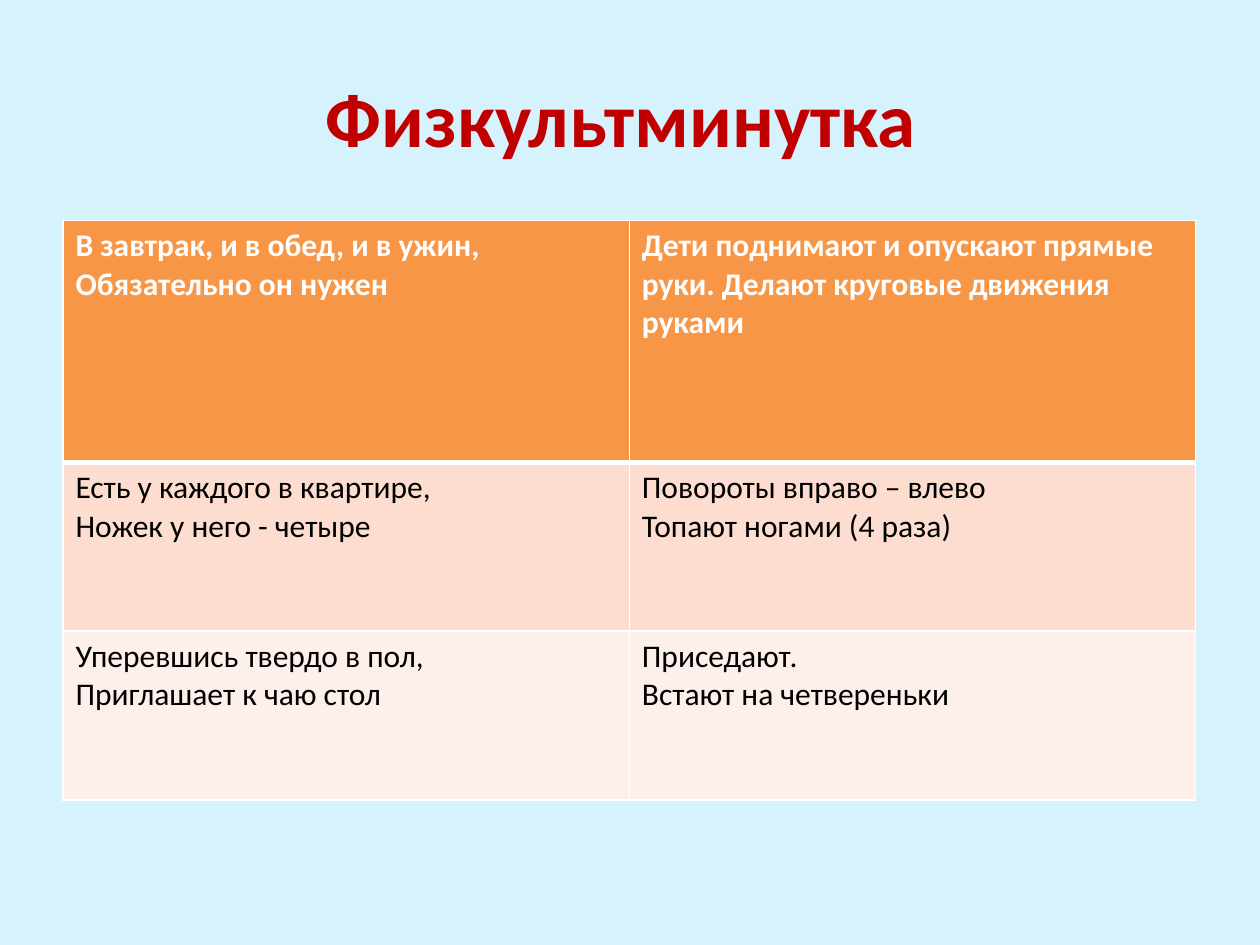
from dataclasses import dataclass

from lxml import etree
from pptx import Presentation
from pptx import util as u
from pptx.dml.color import RGBColor
from pptx.enum import text
from pptx.oxml.ns import qn


@dataclass(frozen=True)
class Theme:
    font: str = "Calibri"
    title_size: int = 44
    body_size: int = 18
    background: str = "D6F2FD"
    title: str = "C00000"
    border: str = "FFFFFF"
    thin: int = 1
    thick: int = 3


@dataclass(frozen=True)
class Row:
    height: float
    fill: str
    color: str
    bold: bool
    verse: str
    movement: str


THEME = Theme()
MARGIN = 0.5
COLUMN_WIDTH = 4.495
ROWS = [
    Row(1.92, "F79646", "FFFFFF", True,
        "В завтрак, и в обед, и в ужин,\nОбязательно он нужен",
        "Дети поднимают и опускают прямые руки. Делают круговые движения руками"),
    Row(1.34, "FCDDCF", "000000", False,
        "Есть у каждого в квартире,\nНожек у него - четыре",
        "Повороты вправо – влево\nТопают ногами (4 раза)"),
    Row(1.34, "FDEFE9", "000000", False,
        "Уперевшись твердо в пол,\nПриглашает к чаю стол",
        "Приседают.\nВстают на четвереньки"),
]


def format_text(frame, size: int, color: str, bold: bool) -> None:
    for para in frame.paragraphs:
        for span in para.runs:
            span.font.name = THEME.font
            span.font.size = u.Pt(size)
            span.font.bold = bold
            span.font.color.rgb = RGBColor.from_string(color)


def set_borders(cell, top: int, bottom: int) -> None:
    """Border lines stand before the fill in the cell properties."""
    properties = cell._tc.get_or_add_tcPr()
    widths = {"lnL": THEME.thin, "lnR": THEME.thin, "lnT": top, "lnB": bottom}
    for position, (side, width) in enumerate(widths.items()):
        line = etree.Element(qn(f"a:{side}"), w=str(u.Pt(width)))
        fill = etree.SubElement(line, qn("a:solidFill"))
        etree.SubElement(fill, qn("a:srgbClr"), val=THEME.border)
        properties.insert(position, line)


def add_title(slide, wording: str) -> None:
    title = slide.shapes.title
    title.left, title.top = u.Inches(MARGIN), u.Inches(0.3)
    title.width, title.height = u.Inches(9), u.Inches(1.25)
    frame = title.text_frame
    frame.text = wording
    frame.vertical_anchor = text.MSO_ANCHOR.MIDDLE
    frame.paragraphs[0].alignment = text.PP_ALIGN.CENTER
    format_text(frame, THEME.title_size, THEME.title, True)


def add_exercise_table(slide, rows: list[Row]) -> None:
    table = slide.shapes.add_table(
        len(rows), 2, u.Inches(MARGIN), u.Inches(1.75),
        u.Inches(2 * COLUMN_WIDTH), u.Inches(sum(row.height for row in rows))).table
    for column in table.columns:
        column.width = u.Inches(COLUMN_WIDTH)
    for index, row in enumerate(rows):
        table.rows[index].height = u.Inches(row.height)
        # A thick rule parts the heading row from the rest
        top = THEME.thick if index == 1 else THEME.thin
        bottom = THEME.thick if index == 0 else THEME.thin
        for cell, wording in zip(table.rows[index].cells, (row.verse, row.movement)):
            cell.text_frame.text = wording
            format_text(cell.text_frame, THEME.body_size, row.color, row.bold)
            cell.fill.solid()
            cell.fill.fore_color.rgb = RGBColor.from_string(row.fill)
            set_borders(cell, top, bottom)


def main() -> None:
    deck = Presentation()
    deck.slide_width, deck.slide_height = u.Inches(10), u.Inches(7.5)
    page = deck.slides.add_slide(deck.slide_layouts[5])

    # Background
    page.background.fill.solid()
    page.background.fill.fore_color.rgb = RGBColor.from_string(THEME.background)

    # Heading and table; the heading keeps its trailing space
    add_title(page, "Физкультминутка ")
    add_exercise_table(page, ROWS)
    deck.save("out.pptx")


if __name__ == "__main__":
    main()
